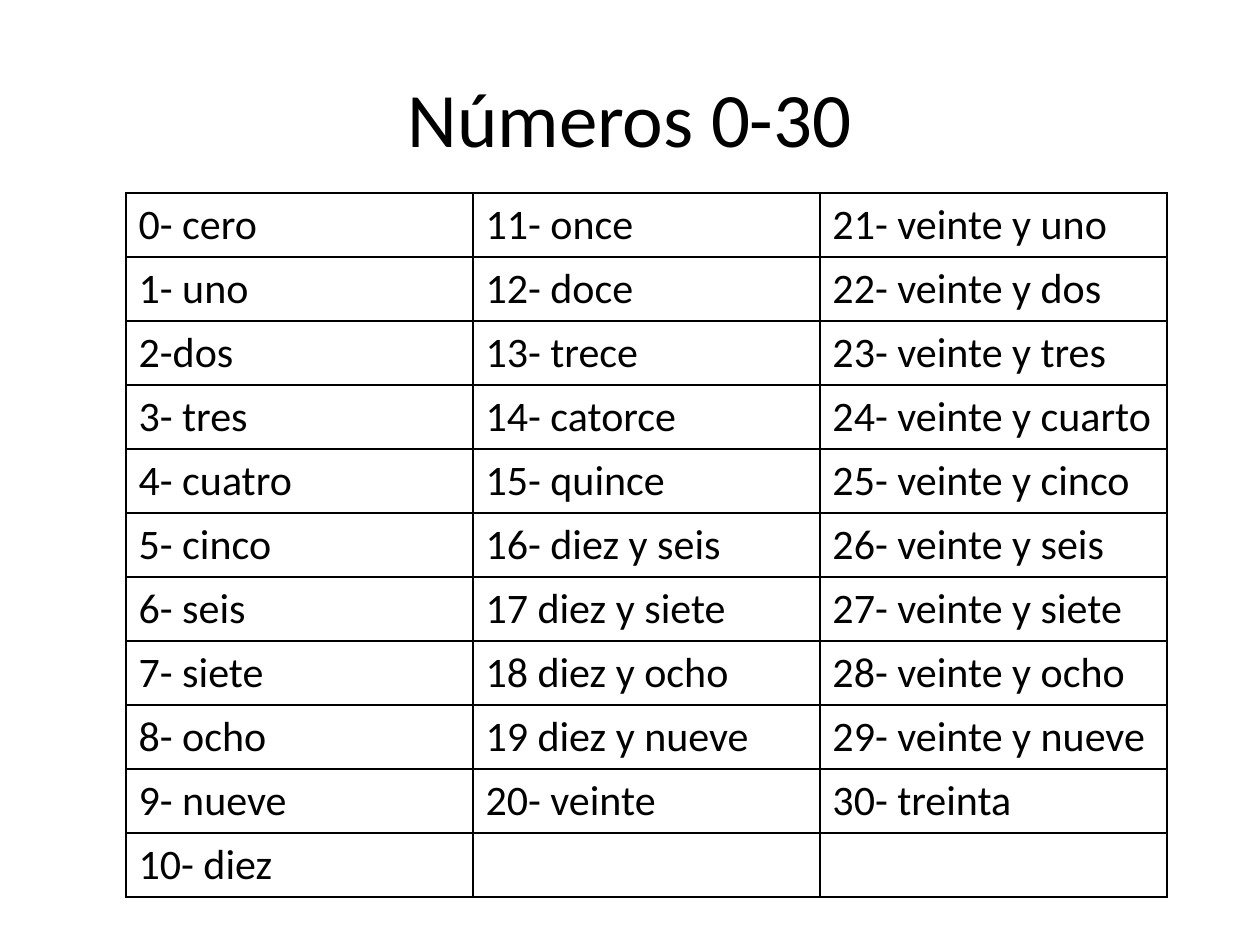
from lxml import etree
from pptx import Presentation
from pptx import util as u
from pptx.dml.color import RGBColor
from pptx.enum import text
from pptx.oxml.ns import qn

PX = 914400 // 126
BLACK = "000000"


def style(p, size):
    p.font.name = "Calibri"
    p.font.size = u.Pt(size)
    p.font.color.rgb = RGBColor.from_string(BLACK)


def add_borders(cell):
    tcPr = cell._tc.get_or_add_tcPr()
    for side in ("lnL", "lnR", "lnT", "lnB"):
        ln = etree.SubElement(tcPr, qn(f"a:{side}"), w=str(u.Pt(1)))
        fill = etree.SubElement(ln, qn("a:solidFill"))
        etree.SubElement(fill, qn("a:srgbClr"), val=BLACK)


prs = Presentation()
prs.slide_width, prs.slide_height = 1260 * PX, 945 * PX
s = prs.slides.add_slide(prs.slide_layouts[5])

# Title
title = s.shapes.title
title.left, title.top, title.width, title.height = (v * PX for v in (63, 38, 1134, 157))
tf = title.text_frame
tf.text = "Números 0-30"
tf.vertical_anchor = text.MSO_ANCHOR.MIDDLE
tf.paragraphs[0].alignment = text.PP_ALIGN.CENTER
style(tf.paragraphs[0], 44)

# Numbers, one list per column
columns = [
    ["0- cero", "1- uno", "2-dos", "3- tres", "4- cuatro", "5- cinco",
     "6- seis", "7- siete", "8- ocho", "9- nueve", "10- diez"],
    ["11- once", "12- doce", "13- trece", "14- catorce", "15- quince",
     "16- diez y seis", "17 diez y siete", "18 diez y ocho",
     "19 diez y nueve", "20- veinte"],
    ["21- veinte y uno", "22- veinte y dos", "23- veinte y tres",
     "24- veinte y cuarto", "25- veinte y cinco", "26- veinte y seis",
     "27- veinte y siete", "28- veinte y ocho", "29- veinte y nueve",
     "30- treinta"],
]

# Table
rows, col_w, row_h = len(columns[0]), 347, 64
table = s.shapes.add_table(rows, len(columns), 126 * PX, 193 * PX,
                           len(columns) * col_w * PX, rows * row_h * PX).table
table.first_row = table.horz_banding = False
for c, words in enumerate(columns):
    for r in range(rows):
        cell = table.cell(r, c)
        if r < len(words):
            cell.text = words[r]
        style(cell.text_frame.paragraphs[0], 24)
        add_borders(cell)
        cell.fill.background()

prs.save("out.pptx")
